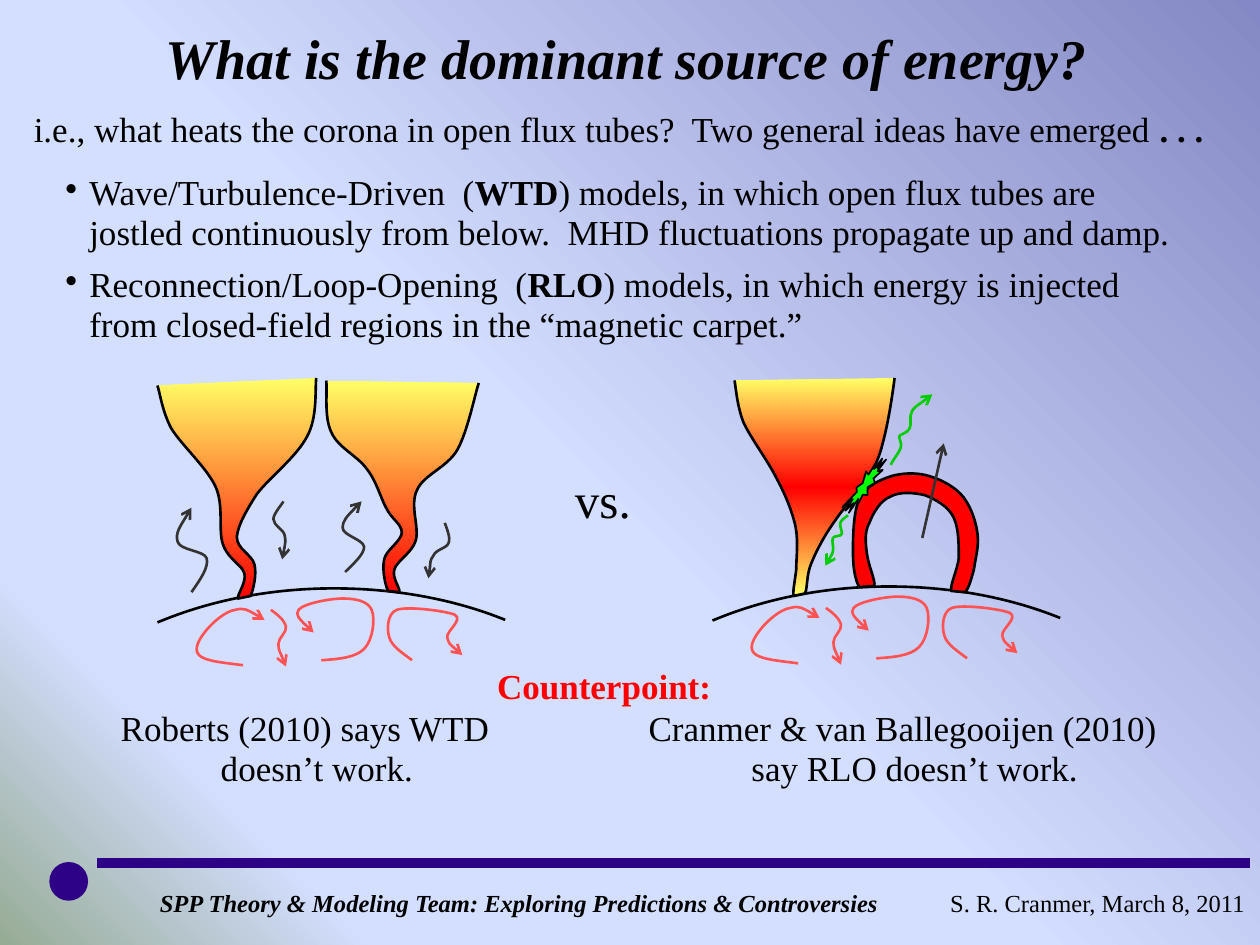
from dataclasses import dataclass, field

import pptx
import pptx.dml.color
import pptx.enum.shapes
import pptx.enum.text
import pptx.oxml
import pptx.oxml.ns
import pptx.util
from pptx.oxml.ns import qn

Point = tuple[float, float]
Run = tuple[str, dict]
SLIDE_WIDTH, SLIDE_HEIGHT = pptx.util.Inches(10), pptx.util.Inches(7.5)
COLUMNS, ROWS = 100, 75
ALIGN = pptx.enum.text.PP_ALIGN


@dataclass(frozen=True)
class Theme:
    font: str = "Times New Roman"
    ink: str = "000000"
    accent: str = "FF0000"
    emblem: str = "2D0284"
    convection: str = "FF5353"
    wave: str = "333333"
    jet: str = "00CC00"
    burst: str = "00FF00"
    title: float = 32
    versus: float = 28
    body: float = 20
    footer: float = 14
    stroke: float = 1.5
    backdrop: tuple = ((0, "8488C4"), (53, "D4DEFF"), (83, "D4DEFF"), (100, "96AB94"))
    tube: tuple = ((0, "FFFF66"), (100, "FF0000"))
    heated_tube: tuple = ((0, "FFFF66"), (50, "FF0000"), (100, "FFFF66"))


THEME = Theme()


@dataclass(frozen=True)
class TextBlock:
    """Text in a box given as left, top, width and height in grid units."""
    box: tuple[float, float, float, float]
    paragraphs: list[list[Run]]
    size: float
    color: str = THEME.ink
    align: int = ALIGN.LEFT
    hanging: bool = False
    bullet: str = ""
    middle: bool = False


@dataclass(frozen=True)
class Outline:
    """Curves of cubic control points; successive curves are joined by a straight line."""
    curves: list[list[Point]]
    color: str = THEME.ink
    arrow: bool = False
    fill: str | tuple = field(default=())
    closed: bool = False


def across(columns: float) -> int:
    return round(columns * SLIDE_WIDTH / COLUMNS)


def down(rows: float) -> int:
    return round(rows * SLIDE_HEIGHT / ROWS)


def rgb(code: str):
    return pptx.dml.color.RGBColor.from_string(code)


def set_gradient(owner, fill, stops: tuple, angle: float) -> None:
    fill.gradient()
    fill.gradient_angle = 360 - angle
    stop_list = owner.find(".//" + qn("a:gsLst"))
    stop_list.clear()
    for position, color in stops:
        stop = stop_list.makeelement(qn("a:gs"), {"pos": str(position * 1000)})
        stop.append(stop.makeelement(qn("a:srgbClr"), {"val": color}))
        stop_list.append(stop)


def style_line(line, color: str, width: float, arrow: bool = False) -> None:
    line.color.rgb = rgb(color)
    line.width = pptx.util.Pt(width)
    if arrow:
        properties = line._get_or_add_ln()
        properties.append(properties.makeelement(qn("a:tailEnd"), {"type": "arrow"}))


def draw_text(slide, block: TextBlock) -> None:
    left, top, width, height = block.box
    frame = slide.shapes.add_textbox(across(left), down(top), across(width), down(height)).text_frame
    frame.word_wrap = True
    if block.middle:
        frame.vertical_anchor = pptx.enum.text.MSO_ANCHOR.MIDDLE
    for index, runs in enumerate(block.paragraphs):
        paragraph = frame.paragraphs[0] if index == 0 else frame.add_paragraph()
        paragraph.alignment = block.align
        if index:
            paragraph.space_before = pptx.util.Pt(7)
        if block.hanging:
            paragraph.line_spacing = 0.95
            properties = paragraph._p.get_or_add_pPr()
            properties.set("marL", str(across(1.9)))
            properties.set("indent", str(-across(1.9)))
            if block.bullet:
                properties.append(properties.makeelement(qn("a:buChar"), {"char": block.bullet}))
        for words, extra in runs:
            run = paragraph.add_run()
            run.text = words
            run.font.color.rgb = rgb(block.color)
            formats = {"name": THEME.font, "size": pptx.util.Pt(block.size), **extra}
            for name, value in formats.items():
                setattr(run.font, name, value)


def draw_outline(slide, outline: Outline, shift: Point = (0, 0)) -> None:
    points = [(across(x + shift[0]), down(y + shift[1])) for curve in outline.curves for x, y in curve]
    builder = slide.shapes.build_freeform(*points[0], scale=1.0)
    builder.add_line_segments(points[1:], close=outline.closed)
    shape = builder.convert_to_shape()
    shape.shadow.inherit = False
    segments = iter(shape._element.findall(".//" + qn("a:lnTo")))
    for index, curve in enumerate(outline.curves):
        if index:
            next(segments)
        for _ in range(len(curve) // 3):
            bend, *others = [next(segments) for _ in range(3)]
            bend.tag = qn("a:cubicBezTo")
            for other in others:
                bend.append(other[0])
                other.getparent().remove(other)
    if isinstance(outline.fill, str):
        shape.fill.solid()
        shape.fill.fore_color.rgb = rgb(outline.fill)
    elif outline.fill:
        set_gradient(shape._element, shape.fill, outline.fill, 90)
    else:
        shape.fill.background()
    style_line(shape.line, outline.color, THEME.stroke, outline.arrow)


def draw_preset(slide, kind, box: tuple, fill: str, line: str, width: float, turn: float = 0) -> None:
    left, top, wide, high = box
    shape = slide.shapes.add_shape(kind, across(left), down(top), across(wide), down(high))
    shape.rotation = turn
    shape.shadow.inherit = False
    shape.fill.solid()
    shape.fill.fore_color.rgb = rgb(fill)
    style_line(shape.line, line, width)


def draw_straight(slide, start: Point, end: Point, color: str, width: float, arrow: bool = False) -> None:
    line = slide.shapes.add_connector(pptx.enum.shapes.MSO_CONNECTOR.STRAIGHT, across(start[0]),
                                      down(start[1]), across(end[0]), down(end[1]))
    style_line(line.line, color, width, arrow)
    properties = line._element.spPr
    properties.append(properties.makeelement(qn("a:effectLst"), {}))


def flow(color: str, *points: Point) -> Outline:
    return Outline([list(points)], color, arrow=True)


SOLAR_SURFACE = [
    Outline([[(12.5, 49.4), (16.8, 47.6), (21.6, 46.7), (26.5, 46.7), (31.2, 46.7), (35.9, 47.5), (40.1, 49.2)]]),
    flow(THEME.convection, (19.3, 52.8), (17.8, 52.6), (16.3, 52.5), (15.8, 52), (15.3, 51.5), (15.9, 50.6),
         (16.4, 50), (16.9, 49.4), (17.9, 48.5), (18.7, 48.4), (19.4, 48.2), (20.2, 48.7), (21, 49.2)),
    flow(THEME.convection, (21.5, 48.4), (22.1, 48.8), (22.6, 49.3), (22.7, 49.7), (22.8, 50.2), (22.1, 50.6),
         (22.1, 51.1), (22.1, 51.6), (22.6, 52.6), (22.7, 52.9)),
    flow(THEME.convection, (25.5, 52.4), (26.9, 52.3), (28.2, 52.2), (28.9, 51.5), (29.6, 50.8), (29.8, 49.1),
         (29.5, 48.4), (29.2, 47.7), (28.2, 47.5), (27.2, 47.5), (26.2, 47.5), (24.1, 47.9), (23.7, 48.4),
         (23.4, 48.8), (24.1, 49.5), (24.9, 50.2)),
    flow(THEME.convection, (32.7, 52.4), (31.9, 51.8), (31.1, 51.3), (30.9, 50.6), (30.7, 50), (30.7, 48.7),
         (31.5, 48.4), (32.4, 48.1), (35.4, 48.5), (36.1, 48.8), (36.8, 49.2), (35.4, 50.1), (35.5, 50.6),
         (35.6, 51.1), (36.1, 51.5), (36.7, 52)),
]
WAVE_MODEL = [
    Outline([[(12.5, 30.6), (12.7, 31.2), (12.9, 32.7), (13.6, 34), (14.4, 35.3), (16.4, 37.1), (17.1, 38.6),
              (17.8, 40.1), (17.3, 42.1), (17.7, 43.2), (18.1, 44.4), (19.2, 44.8), (19.4, 45.5), (19.6, 46.2),
              (18.8, 47.2), (18.9, 47.5)],
             [(19.9, 47.3), (20.1, 46.8), (20.4, 45.6), (20.2, 44.8), (20, 44), (18.8, 43.6), (18.8, 42.6),
              (18.9, 41.7), (19.5, 40.6), (20.4, 39.2), (21.4, 37.9), (23.6, 36.2), (24.4, 34.6), (25.2, 33.1),
              (25, 31), (25.1, 30)]], fill=THEME.tube),
    Outline([[(38, 30.4), (37.7, 31.3), (37.1, 34.3), (36.3, 35.7), (35.5, 37.1), (33.6, 37.7), (33.1, 38.9),
              (32.5, 40.1), (33.3, 41.8), (33, 42.9), (32.7, 43.9), (31.5, 44.5), (31.3, 45.2), (31.1, 45.9),
              (31.8, 46.7), (31.7, 47)],
             [(30.8, 46.9), (30.6, 46.5), (30.3, 45.2), (30.5, 44.4), (30.6, 43.7), (31.8, 43), (31.9, 42.3),
              (31.9, 41.6), (31.1, 41.2), (30.7, 40.4), (30.2, 39.5), (29.9, 38.2), (29.1, 37.2), (28.4, 36.2),
              (26.8, 35.5), (26.3, 34.3), (25.7, 33.1), (26, 31), (25.9, 30.2)]], fill=THEME.tube),
    flow(THEME.wave, (15.2, 47), (15.9, 46), (16.6, 45), (16.4, 44.3), (16.2, 43.7), (14.3, 43.7), (14.1, 43),
         (13.9, 42.3), (14.6, 41.3), (15.2, 40.3)),
    flow(THEME.wave, (22.5, 39.8), (22.4, 40), (21.7, 40.8), (21.7, 41.2), (21.7, 41.7), (22.5, 42), (22.6, 42.5),
         (22.7, 43), (22.5, 44), (22.4, 44.4)),
    flow(THEME.wave, (27.4, 45.4), (28.1, 44.7), (28.9, 44), (28.9, 43.4), (28.8, 42.8), (27.2, 42.5),
         (27.2, 41.9), (27.2, 41.3), (27.9, 40.6), (28.7, 39.8)),
    flow(THEME.wave, (35.3, 41.5), (35.4, 41.8), (35.8, 42.7), (35.6, 43.1), (35.5, 43.5), (34.6, 43.6),
         (34.4, 44.1), (34.1, 44.5), (34.1, 45.5), (34, 45.9)),
]
LOOP_MODEL = [
    Outline([[(58.3, 30.2), (58.4, 30.7), (58.5, 32.2), (59, 33.5), (59.6, 34.8), (60.9, 36.5), (61.6, 37.9),
              (62.3, 39.2), (62.8, 40.4), (63.1, 41.6), (63.4, 42.9), (63.2, 44.2), (63.2, 45.2), (63.1, 46.1),
              (62.9, 47), (63, 47.3)],
             [(63.9, 47.1), (64.1, 46.7), (64, 45.6), (64.4, 44.7), (64.8, 43.7), (65.5, 42.4), (66.3, 41.3),
              (67.1, 40.1), (68.4, 38.8), (69.1, 37.6), (69.8, 36.4), (70, 35.5), (70.3, 34.2), (70.6, 32.9),
              (70.9, 30.9), (71, 30)]], fill=THEME.heated_tube),
    Outline([[(68.2, 46.6), (67.9, 46.1), (67.7, 45.1), (67.7, 43.9), (67.7, 42.8), (67.7, 40.7), (68.2, 39.6),
              (68.7, 38.6), (69.8, 38.1), (70.7, 37.8), (71.7, 37.5), (72.9, 37.5), (73.8, 37.8), (74.8, 38.1),
              (75.9, 38.7), (76.5, 39.5), (77.1, 40.3), (77.5, 41.5), (77.6, 42.5), (77.7, 43.4), (77.4, 44.4),
              (77.3, 45.2), (77.1, 45.9), (76.9, 46.7), (76.6, 47)],
             [(75.5, 46.9), (75.4, 46.4), (76, 45.2), (76.1, 44.3), (76.1, 43.3), (76.1, 41.9), (75.7, 41.1),
              (75.3, 40.2), (74.2, 39.6), (73.4, 39.3), (72.6, 39.1), (71.4, 39), (70.7, 39.4), (69.9, 39.7),
              (69.3, 40.7), (69, 41.5), (68.6, 42.2), (68.7, 43.1), (68.8, 43.9), (68.9, 44.8), (69.5, 46.1),
              (69.4, 46.5)]], fill=THEME.accent, closed=True),
]
JETS = [
    flow(THEME.jet, (70.7, 36.9), (70.8, 36.6), (71.4, 35.9), (71.5, 35.5), (71.6, 35.1), (71.3, 34.8), (71.4, 34.6),
         (71.6, 34.4), (72, 34.4), (72.2, 34), (72.4, 33.7), (72.1, 33.1), (72.4, 32.6), (72.7, 32.2), (73.7, 31.6),
         (74, 31.3)),
    flow(THEME.jet, (67.3, 40.9), (67.2, 41), (66.7, 41.3), (66.7, 41.5), (66.6, 41.8), (66.9, 42.2), (66.8, 42.4),
         (66.7, 42.6), (66.2, 42.5), (66.1, 42.7), (66, 43), (66.2, 43.4), (66.1, 43.8), (66, 44.1), (65.6, 44.7),
         (65.5, 44.9)),
]
BOLD, HEADING = {"bold": True}, {"bold": True, "italic": True}
TEXTS = [
    TextBlock((11.7, 70, 60, 3.4), [[("SPP Theory & Modeling Team: Exploring Predictions & Controversies", HEADING)]],
              THEME.footer),
    TextBlock((50.6, 70, 49.2, 3.4), [[("S. R. Cranmer, March 8, 2011", {})]], THEME.footer, align=ALIGN.RIGHT),
    TextBlock((1.2, 0.7, 97.1, 7.6), [[("What is the dominant source of energy?", HEADING)]], THEME.title,
              align=ALIGN.CENTER, middle=True),
    TextBlock((43.2, 36.8, 9.3, 5.7), [[("vs.", {})]], THEME.versus, align=ALIGN.CENTER),
    TextBlock((1.7, 8.3, 96.4, 4.2), [[
        ("i.e., what heats the corona in open flux tubes?  Two general ideas have emerged ", {}), (". . .", BOLD)]],
        THEME.body, hanging=True),
    TextBlock((4.2, 13.3, 90.8, 15), [
        [("Wave/Turbulence-Driven  (", {}), ("WTD", BOLD),
         (") models, in which open flux tubes are jostled continuously from below.  "
          "MHD fluctuations propagate up and damp.", {})],
        [("Reconnection/Loop-Opening  (", {}), ("RLO", BOLD),
         (") models, in which energy is injected from closed-field regions in the “magnetic carpet.”", {})]],
        THEME.body, hanging=True, bullet="•"),
    TextBlock((34.2, 52.5, 27.5, 4.2), [[("Counterpoint:", BOLD)]], THEME.body, THEME.accent, ALIGN.CENTER, True),
    TextBlock((6.7, 55.8, 35, 7.4), [[("Roberts (2010) says WTD doesn’t work.", {})]], THEME.body,
              align=ALIGN.CENTER, hanging=True),
    TextBlock((50, 55.8, 43.3, 7.4), [[("Cranmer & van Ballegooijen (2010) say RLO doesn’t work.", {})]], THEME.body,
              align=ALIGN.CENTER, hanging=True),
]


def main() -> None:
    deck = pptx.Presentation()
    deck.slide_width, deck.slide_height = SLIDE_WIDTH, SLIDE_HEIGHT
    slide = deck.slides.add_slide(deck.slide_layouts[6])
    set_gradient(slide._element, slide.background.fill, THEME.backdrop, 135)
    presets = pptx.enum.shapes.MSO_SHAPE
    draw_preset(slide, presets.OVAL, (4, 68.5, 2.9, 2.9), THEME.emblem, THEME.emblem, 1.25)
    draw_straight(slide, (7.7, 68.5), (99.2, 68.5), THEME.emblem, 5.5)
    for model, shift in ((WAVE_MODEL, (0, 0)), (LOOP_MODEL, (44.05, -0.15))):
        for outline in SOLAR_SURFACE:
            draw_outline(slide, outline, shift)
        for outline in model:
            draw_outline(slide, outline)
    draw_preset(slide, presets.EXPLOSION1, (66.1, 37.9, 5.2, 1.2), THEME.burst, THEME.ink, 1, 305.7)
    draw_straight(slide, (73.2, 42.7), (74.9, 35.2), THEME.wave, THEME.stroke, arrow=True)
    for jet in JETS:
        draw_outline(slide, jet)
    for block in TEXTS:
        draw_text(slide, block)
    deck.save("out.pptx")


if __name__ == "__main__":
    main()
